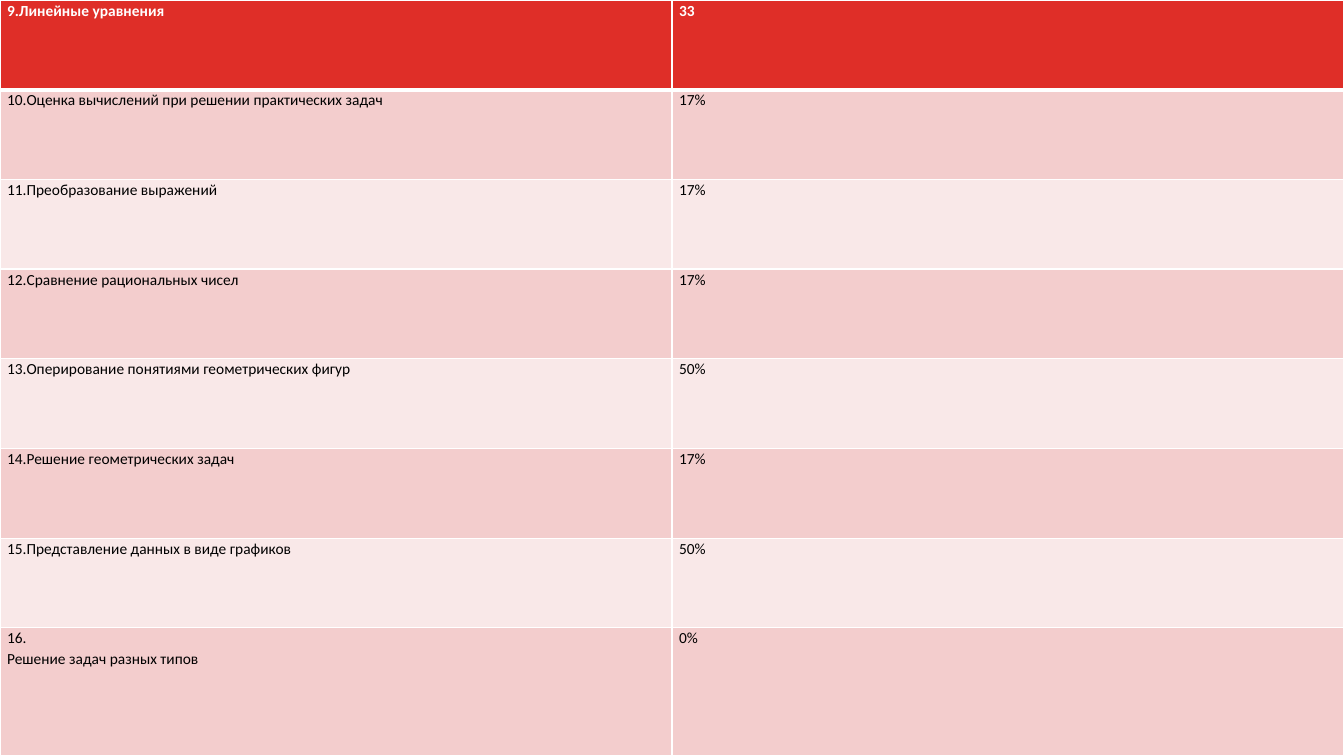
import dataclasses

import lxml.etree
import pptx
import pptx.dml.color
import pptx.oxml.ns
import pptx.util


@dataclasses.dataclass(frozen=True)
class Theme:
    back: str = "000000"
    head: str = "DF2E28"
    bands: tuple = ("F3CDCD", "F9E8E8")
    light: str = "FFFFFF"
    dark: str = "000000"
    font: str = "Calibri"
    size: float = 11
    thin: float = 1
    thick: float = 3


THEME = Theme()
WIDE, HIGH = 13.33, 7.5
ROW = 0.89
SIDE = 0.07
TASKS = [
    ("9.Линейные уравнения", "33"),
    ("10.Оценка вычислений при решении практических задач", "17%"),
    ("11.Преобразование выражений", "17%"),
    ("12.Сравнение рациональных чисел", "17%"),
    ("13.Оперирование понятиями геометрических фигур", "50%"),
    ("14.Решение геометрических задач", "17%"),
    ("15.Представление данных в виде графиков", "50%"),
    ("16.\nРешение задач разных типов", "0%"),
]


def paint(fill, color):
    fill.solid()
    fill.fore_color.rgb = pptx.dml.color.RGBColor.from_string(color)


def write(frame, text, *, color, bold=False, size=THEME.size):
    frame.text = text
    for para in frame.paragraphs:
        para.line_spacing = 1.07
        for run in para.runs:
            run.font.name = THEME.font
            run.font.size = pptx.util.Pt(size)
            run.font.bold = bold
            paint(run.font.fill, color)


def edge(cell, **widths):
    """Draw the cell borders; widths in points, keyed L, R, T and B."""
    props = cell._tc.get_or_add_tcPr()
    name = pptx.oxml.ns.qn
    for side in "LRTB":
        width = pptx.util.Pt(widths.get(side, THEME.thin))
        line = lxml.etree.SubElement(props, name("a:ln" + side), w=str(int(width)))
        fill = lxml.etree.SubElement(line, name("a:solidFill"))
        lxml.etree.SubElement(fill, name("a:srgbClr"), val=THEME.light)


def style(cell, row):
    cell.margin_left = cell.margin_right = pptx.util.Inches(SIDE)
    cell.margin_top = cell.margin_bottom = 0
    # The thick rule under the head is shared by the first two rows.
    rule = {0: {"B": THEME.thick}, 1: {"T": THEME.thick}}.get(row, {})
    edge(cell, **rule)
    paint(cell.fill, THEME.bands[(row - 1) % 2] if row else THEME.head)


def score_table(slide, left, top, width, height):
    box = [pptx.util.Inches(side) for side in (left, top, width, height)]
    count = len(TASKS)
    table = slide.shapes.add_table(count, 2, *box).table
    for col in table.columns:
        col.width = pptx.util.Inches(width / 2)
    for row, texts in enumerate(TASKS):
        last = row == count - 1
        tall = height - ROW * row if last else ROW
        table.rows[row].height = pptx.util.Inches(tall)
        for col, text in enumerate(texts):
            cell = table.cell(row, col)
            style(cell, row)
            write(cell.text_frame, text, bold=row == 0,
                  color=THEME.dark if row else THEME.light)


def main():
    deck = pptx.Presentation()
    deck.slide_width = pptx.util.Inches(WIDE)
    deck.slide_height = pptx.util.Inches(HIGH)
    slide = deck.slides.add_slide(deck.slide_layouts[6])
    paint(slide.background.fill, THEME.back)
    score_table(slide, 0, 0, WIDE, HIGH)
    deck.save("out.pptx")


if __name__ == "__main__":
    main()
